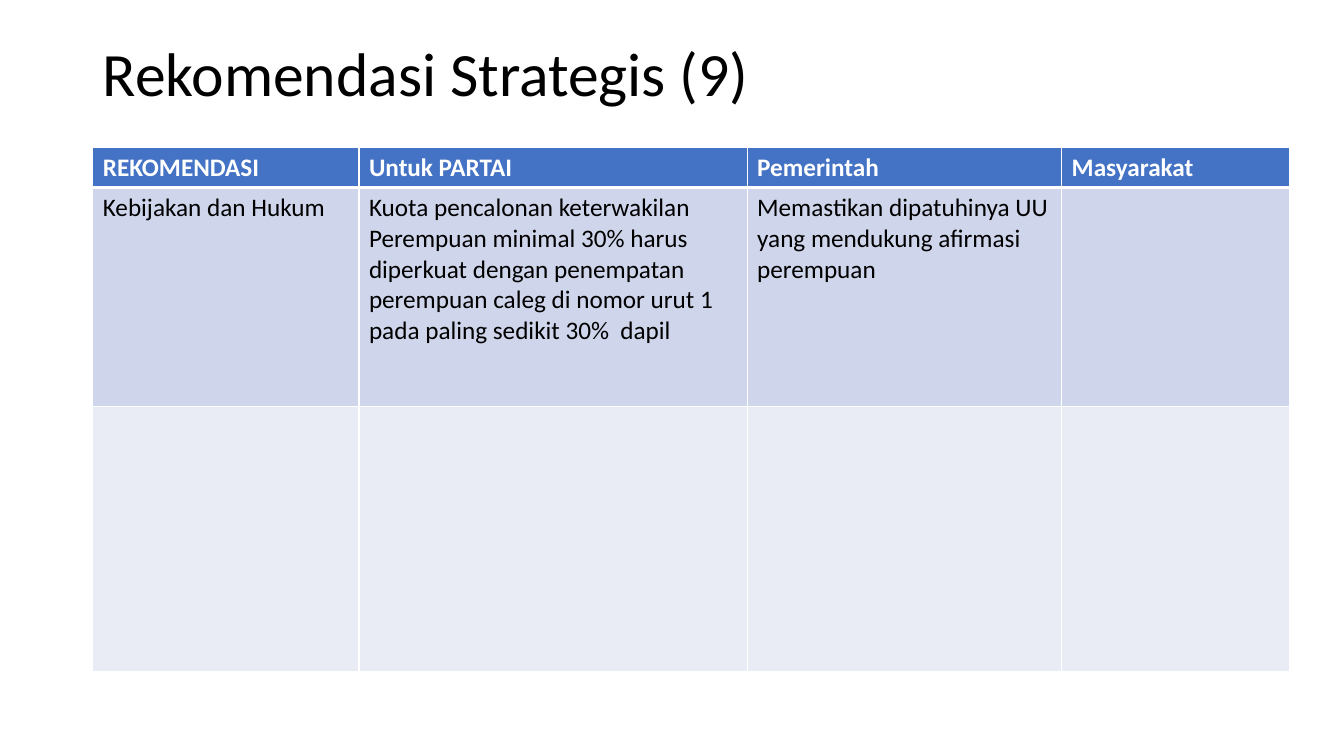
from lxml.etree import SubElement
from pptx import Presentation
from pptx.dml.color import RGBColor
from pptx.enum.text import MSO_ANCHOR
from pptx.oxml.ns import qn
from pptx.util import Inches, Pt

FONT = "Calibri"
BLACK = RGBColor(0x00, 0x00, 0x00)
WHITE = RGBColor(0xFF, 0xFF, 0xFF)
HEADER_BLUE = RGBColor(0x44, 0x72, 0xC4)
BAND_DARK = RGBColor(0xCF, 0xD5, 0xEA)
BAND_LIGHT = RGBColor(0xE9, 0xEB, 0xF5)

COLUMN_WIDTHS = (2.64, 3.85, 3.12, 2.26)
ROW_HEIGHTS = (0.38, 2.17, 2.63)
ROW_FILLS = (HEADER_BLUE, BAND_DARK, BAND_LIGHT)
ROW_TEXTS = (
    ("REKOMENDASI", "Untuk PARTAI", "Pemerintah", "Masyarakat"),
    (
        "Kebijakan dan Hukum",
        "Kuota pencalonan keterwakilan Perempuan minimal 30% harus diperkuat "
        "dengan penempatan perempuan caleg di nomor urut 1 pada paling sedikit "
        "30%  dapil",
        "Memastikan dipatuhinya UU yang mendukung afirmasi perempuan",
        "",
    ),
    ("", "", "", ""),
)


def format_font(font, size, color, bold=False):
    font.name = FONT
    font.size = Pt(size)
    font.bold = bold
    font.color.rgb = color


def add_title(slide, text):
    box = slide.shapes.add_textbox(Inches(0.92), Inches(0.38), Inches(11.5), Inches(1.45))
    frame = box.text_frame
    frame.word_wrap = True
    frame.vertical_anchor = MSO_ANCHOR.TOP
    frame.text = text
    paragraph = frame.paragraphs[0]
    paragraph.line_spacing = 0.9
    format_font(paragraph.runs[0].font, 44, BLACK)


def set_borders(cell, bottom_width):
    properties = cell._tc.get_or_add_tcPr()
    sides = (("a:lnL", 1), ("a:lnR", 1), ("a:lnT", 1), ("a:lnB", bottom_width))
    # Border lines come before the fill in the cell properties
    for position, (side, width) in enumerate(sides):
        line = SubElement(properties, qn(side), w=str(Pt(width)))
        fill = SubElement(line, qn("a:solidFill"))
        SubElement(fill, qn("a:srgbClr"), val=str(WHITE))
        properties.insert(position, line)


def fill_cell(cell, text, fill_color, is_header):
    cell.fill.solid()
    cell.fill.fore_color.rgb = fill_color
    set_borders(cell, 3 if is_header else 1)
    cell.text_frame.text = text
    for run in cell.text_frame.paragraphs[0].runs:
        format_font(run.font, 18, WHITE if is_header else BLACK, is_header)


def add_recommendation_table(slide):
    table = slide.shapes.add_table(
        len(ROW_HEIGHTS), len(COLUMN_WIDTHS), Inches(0.92), Inches(1.46),
        Inches(sum(COLUMN_WIDTHS)), Inches(sum(ROW_HEIGHTS)),
    ).table
    for column, width in zip(table.columns, COLUMN_WIDTHS):
        column.width = Inches(width)
    for index, (row, height) in enumerate(zip(table.rows, ROW_HEIGHTS)):
        row.height = Inches(height)
        for cell, text in zip(row.cells, ROW_TEXTS[index]):
            fill_cell(cell, text, ROW_FILLS[index], index == 0)


def main():
    presentation = Presentation()
    presentation.slide_width = Inches(13.33)
    presentation.slide_height = Inches(7.5)
    slide = presentation.slides.add_slide(presentation.slide_layouts[6])

    # Heading and recommendations
    add_title(slide, "Rekomendasi Strategis (9)")
    add_recommendation_table(slide)

    presentation.save("out.pptx")


if __name__ == "__main__":
    main()
